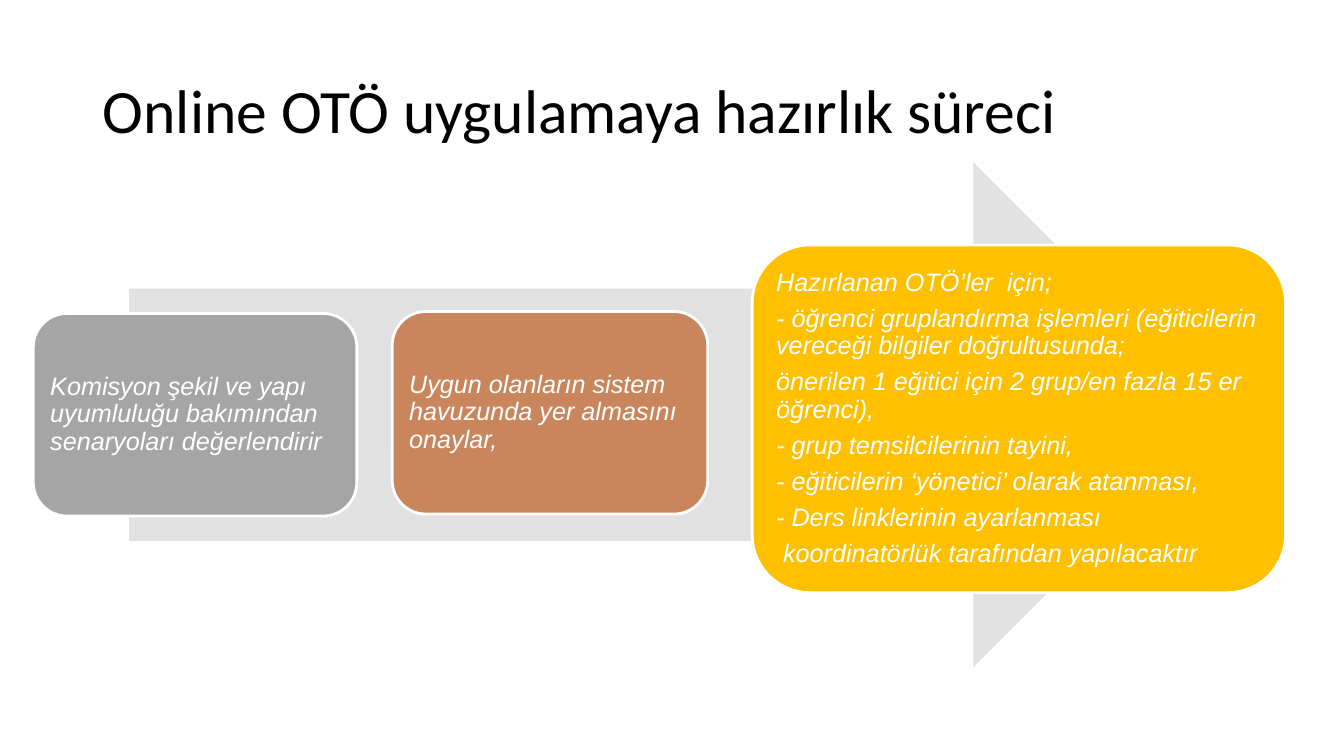
from pptx import Presentation
from pptx.dml.color import RGBColor
from pptx.enum.shapes import MSO_SHAPE
from pptx.enum.text import MSO_ANCHOR, PP_ALIGN
from pptx.util import Inches, Pt

ARROW = MSO_SHAPE.RIGHT_ARROW
ROUND = MSO_SHAPE.ROUNDED_RECTANGLE
MIDDLE = MSO_ANCHOR.MIDDLE
LEFT = PP_ALIGN.LEFT
WHITE = "FFFFFF"

STEPS = [
    ((0.33, 3.11, 3.21, 2.01), "A5A5A5", [
        "Komisyon şekil ve yapı uyumluluğu bakımından senaryoları değerlendirir",
    ]),
    ((3.89, 3.09, 3.13, 2.01), "C9865C", [
        "Uygun olanların sistem havuzunda yer almasını onaylar,",
    ]),
    ((7.46, 2.43, 5.29, 3.45), "FFC000", [
        "Hazırlanan OTÖ’ler  için;",
        "- öğrenci gruplandırma işlemleri (eğiticilerin vereceği bilgiler doğrultusunda;",
        "önerilen 1 eğitici için 2 grup/en fazla 15 er öğrenci),",
        "- grup temsilcilerinin tayini,",
        "- eğiticilerin ‘yönetici’ olarak atanması,",
        "- Ders linklerinin ayarlanması",
        " koordinatörlük tarafından yapılacaktır",
    ]),
]


def color(code):
    return RGBColor.from_string(code)


def place(shape, box):
    shape.left, shape.top, shape.width, shape.height = map(Inches, box)


def write(para, text, font, size, code, italic=False):
    para.alignment = LEFT
    para.line_spacing = 0.9
    run = para.add_run()
    run.text = text
    run.font.name = font
    run.font.size = Pt(size)
    run.font.italic = italic
    run.font.color.rgb = color(code)


def add_title(slide, text):
    title = slide.shapes.title
    place(title, (0.92, 0.4, 11.5, 1.45))
    frame = title.text_frame
    frame.vertical_anchor = MIDDLE
    write(frame.paragraphs[0], text, "Calibri", 44, "000000")


def add_block(slide, kind, box, fill):
    shape = slide.shapes.add_shape(kind, *map(Inches, box))
    shape.shadow.inherit = False
    shape.fill.solid()
    shape.fill.fore_color.rgb = color(fill)
    shape.line.fill.background()
    return shape


def add_step(slide, box, fill, lines):
    step = add_block(slide, ROUND, box, fill)
    step.line.color.rgb = color(WHITE)
    step.line.width = Pt(2)
    frame = step.text_frame
    frame.word_wrap = True
    frame.vertical_anchor = MIDDLE
    frame.margin_left = frame.margin_right = Inches(0.07)
    frame.margin_top = frame.margin_bottom = Inches(0.07)
    for i, text in enumerate(lines):
        para = frame.add_paragraph() if i else frame.paragraphs[0]
        para.space_after = Pt(6.3)
        write(para, text, "Arial", 18, WHITE, italic=True)


def main():
    deck = Presentation()
    deck.slide_width = Inches(13.33)
    deck.slide_height = Inches(7.5)
    slide = deck.slides.add_slide(deck.slide_layouts[5])
    add_title(slide, "Online OTÖ uygulamaya hazırlık süreci")
    add_block(slide, ARROW, (1.28, 1.61, 10.88, 5.01), "E1E1E1")
    for box, fill, lines in STEPS:
        add_step(slide, box, fill, lines)
    deck.save("out.pptx")


if __name__ == "__main__":
    main()
